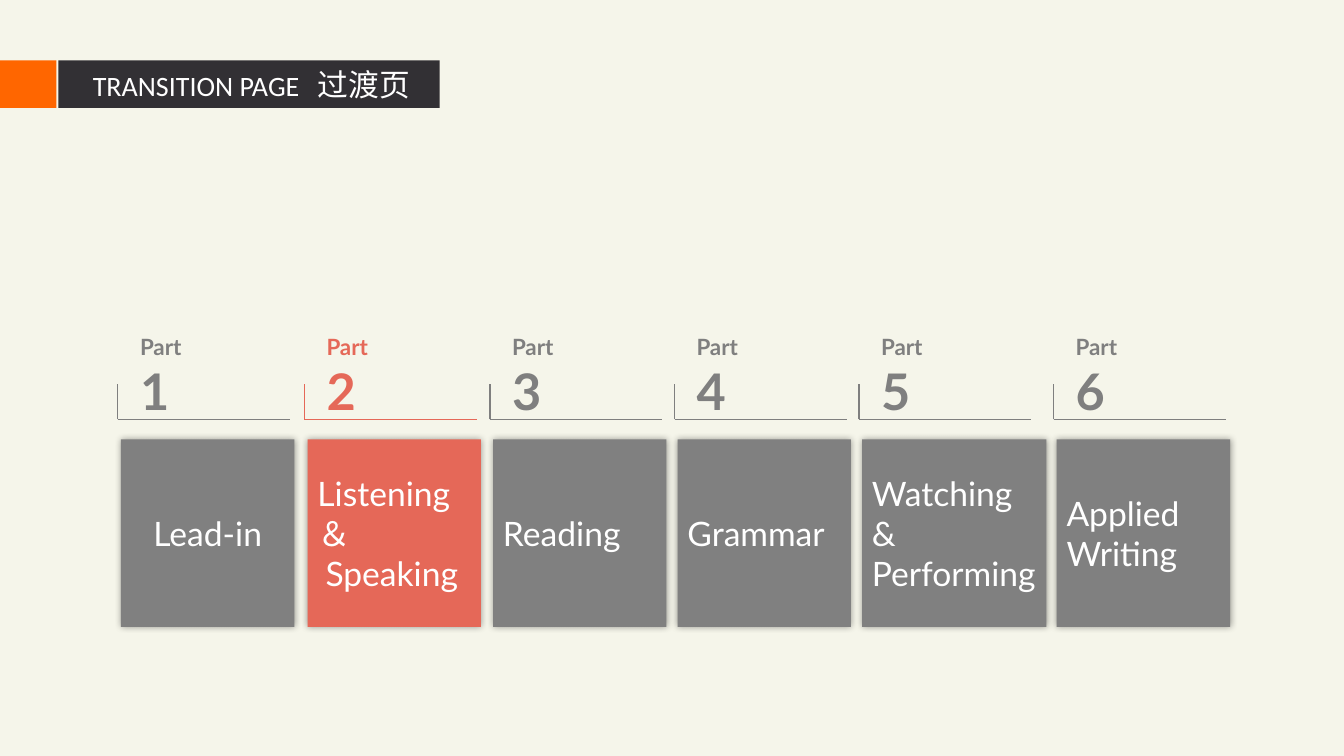
import pptx
import pptx.dml.color
import pptx.enum.shapes
import pptx.enum.text
import pptx.oxml
import pptx.oxml.ns
import pptx.util
from lxml import etree

RGBColor = pptx.dml.color.RGBColor
Inches = pptx.util.Inches
Pt = pptx.util.Pt
qn = pptx.oxml.ns.qn
Align = pptx.enum.text.PP_ALIGN
Anchor = pptx.enum.text.MSO_ANCHOR
RECTANGLE = pptx.enum.shapes.MSO_SHAPE.RECTANGLE
STRAIGHT = pptx.enum.shapes.MSO_CONNECTOR.STRAIGHT

CREAM = RGBColor(0xF5, 0xF5, 0xEA)
CHARCOAL = RGBColor(0x32, 0x30, 0x34)
ORANGE = RGBColor(0xFF, 0x66, 0x00)
CORAL = RGBColor(0xE5, 0x68, 0x58)
CARD_GRAY = RGBColor(0x80, 0x80, 0x80)
LABEL_GRAY = RGBColor(0x7F, 0x7F, 0x7F)
WHITE = RGBColor(0xFF, 0xFF, 0xFF)

LATO, CALIBRI, CJK = "Lato", "Calibri", "Noto Sans CJK SC"
CURRENT_PART = 2
CARD_WIDTH, WIDE_CARD = 1.72, 1.83
PART_TOP, PART_HEIGHT = 3.26, 2.96

# Left edge, width, alignment, and paragraphs of (text, font) spans
PARTS = [
    (1.20, CARD_WIDTH, Align.CENTER, [[("Lead-in", LATO)]]),
    (3.05, CARD_WIDTH, Align.LEFT,
     [[("Listening ", LATO), ("＆", CALIBRI)], [("Speaking", LATO)]]),
    (4.89, CARD_WIDTH, Align.LEFT, [[("Reading", LATO)]]),
    (6.72, CARD_WIDTH, Align.LEFT, [[("Grammar", LATO)]]),
    (8.55, WIDE_CARD, Align.LEFT, [[("Watching & Performing", LATO)]]),
    (10.48, CARD_WIDTH, Align.LEFT, [[("Applied Writing", LATO)]]),
]


def add_span(para, text, font, size, color, bold=False):
    span = para.add_run()
    span.text = text
    span.font.color.rgb = color
    formats = {"name": font, "size": Pt(size), "bold": bold}
    for name, value in formats.items():
        setattr(span.font, name, value)
    east_asian = etree.SubElement(span.font._element, qn("a:ea"))
    east_asian.set("typeface", font)


def add_block(page, box, color):
    block = page.shapes.add_shape(RECTANGLE, *map(Inches, box))
    block.shadow.inherit = False
    block.fill.solid()
    block.fill.fore_color.rgb = color
    block.line.fill.background()
    return block


def add_glow(block):
    effects = block._element.spPr.find(qn("a:effectLst"))
    shadow = etree.SubElement(effects, qn("a:outerShdw"),
                              blurRad=str(Pt(5)), dist="0", dir="0",
                              algn="ctr", rotWithShape="0")
    black = etree.SubElement(shadow, qn("a:srgbClr"), val="000000")
    etree.SubElement(black, qn("a:alpha"), val="40000")


def add_rule(page, start, end, color):
    rule = page.shapes.add_connector(STRAIGHT, *map(Inches, start + end))
    rule.line.color.rgb = color
    rule.line.width = Pt(0.75)
    etree.SubElement(rule._element.spPr, qn("a:effectLst"))


def build_header(page, box):
    left, top, width, height = box
    accent = 0.56
    add_block(page, (left, top, accent, height), ORANGE)

    title = page.shapes.title
    bar = {"left": left + accent + 0.02, "top": top,
           "width": width - accent - 0.02, "height": height}
    for name, value in bar.items():
        setattr(title, name, Inches(value))
    title.fill.solid()
    title.fill.fore_color.rgb = CHARCOAL
    frame = title.text_frame
    formats = {"margin_left": Inches(0.34), "margin_right": 0,
               "margin_top": 0, "margin_bottom": 0, "word_wrap": True,
               "vertical_anchor": Anchor.MIDDLE,
               "auto_size": pptx.enum.text.MSO_AUTO_SIZE.NONE}
    for name, value in formats.items():
        setattr(frame, name, value)

    # A tab stop separates the two languages
    para = frame.paragraphs[0]
    para.alignment = Align.LEFT
    tabs = etree.SubElement(para._p.get_or_add_pPr(), qn("a:tabLst"))
    etree.SubElement(tabs, qn("a:tab"), pos=str(Inches(2.23)), algn="l")
    add_span(para, "TRANSITION PAGE\t", CALIBRI, 20, WHITE)
    add_span(para, "过渡页", CJK, 22, WHITE)


def build_part(page, box, number, align, lines):
    left, top, width, height = box
    current = number == CURRENT_PART
    accent = CORAL if current else LABEL_GRAY

    # Card with the part's name
    card_top = top + 1.1
    card = add_block(page, (left, card_top, width, height - 1.1),
                     CORAL if current else CARD_GRAY)
    add_glow(card)
    frame = card.text_frame
    frame.word_wrap = True
    frame.vertical_anchor = Anchor.MIDDLE
    for index, spans in enumerate(lines):
        para = frame.add_paragraph() if index else frame.paragraphs[0]
        para.alignment = align
        if index:
            para._p.get_or_add_pPr().set("marL", str(Inches(0.08)))
        for text, font in spans:
            add_span(para, text, font, 24, WHITE)

    # Number label
    label = page.shapes.add_textbox(
        *map(Inches, (left + 0.09, top, 0.91, 0.98)))
    label.text_frame.word_wrap = True
    add_span(label.text_frame.paragraphs[0], "Part", LATO, 16, accent, True)
    add_span(label.text_frame.add_paragraph(), str(number), LATO, 36,
             accent, True)

    # Corner bracket under the label
    corner = (left - 0.03, top + 0.9)
    add_rule(page, corner, (corner[0] + 1.71, corner[1]), accent)
    add_rule(page, corner, (corner[0], corner[1] - 0.35), accent)


def main():
    deck = pptx.Presentation()
    deck.slide_width, deck.slide_height = Inches(13.33), Inches(7.5)
    page = deck.slides.add_slide(deck.slide_layouts.get_by_name("Title Only"))
    page.background.fill.solid()
    page.background.fill.fore_color.rgb = CREAM

    build_header(page, (0, 0.6, 4.36, 0.47))
    for number, (left, width, align, lines) in enumerate(PARTS, 1):
        box = (left, PART_TOP, width, PART_HEIGHT)
        build_part(page, box, number, align, lines)
    deck.save("out.pptx")


if __name__ == "__main__":
    main()
